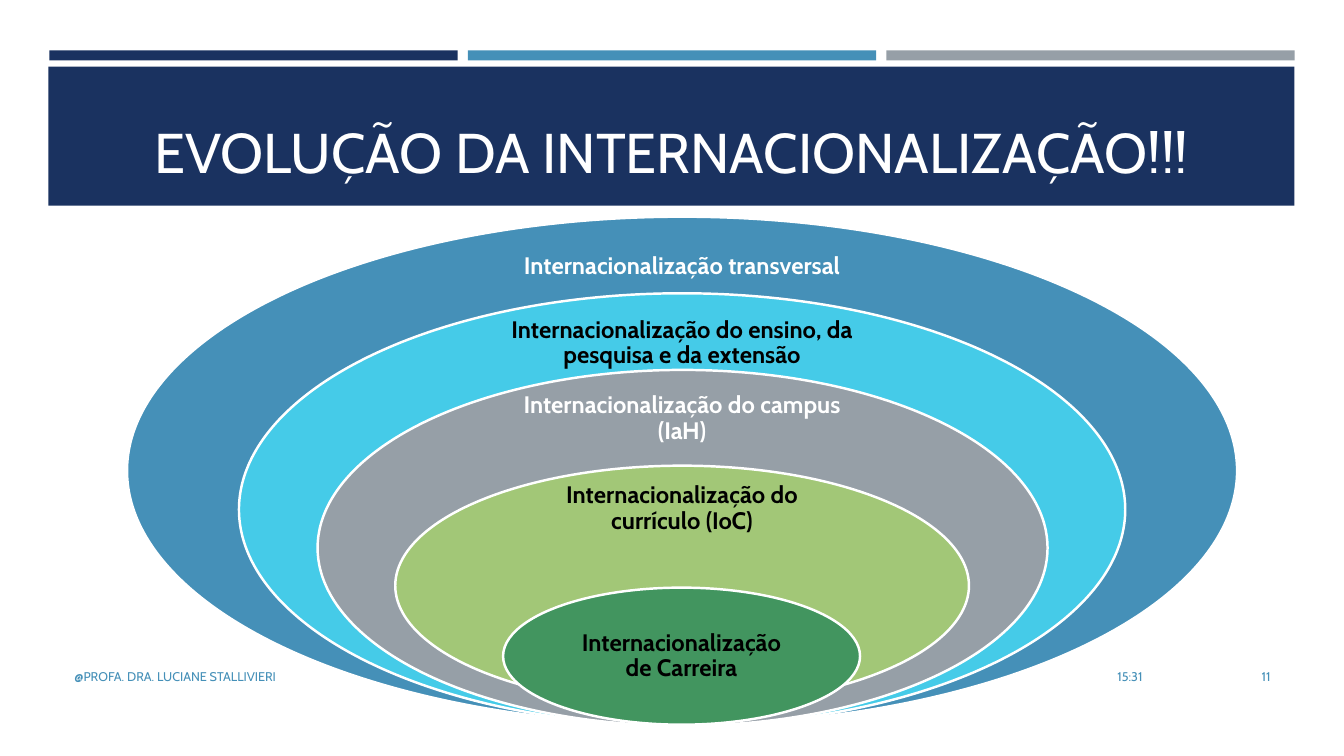
from dataclasses import dataclass

from pptx import Presentation
from pptx.dml.color import RGBColor
from pptx.enum.shapes import MSO_SHAPE as Preset
from pptx.enum.text import MSO_ANCHOR as Anchor, PP_ALIGN as Align
from pptx.shapes.autoshape import Shape
from pptx.slide import Slide
from pptx.util import Emu, Pt

EMU_PER_PX = 9144
FONT = "Cabin"
COLORS = {
    "white": "FFFFFF",
    "black": "000000",
    "navy": "1A3260",
    "blue": "4590B8",
    "cyan": "45CBE8",
    "gray": "969FA7",
    "lime": "A2C777",
    "green": "42955F",
}


@dataclass(frozen=True)
class Box:
    left: int
    top: int
    width: int
    height: int

    def emu(self) -> tuple[Emu, ...]:
        sides = (self.left, self.top, self.width, self.height)
        return tuple(Emu(side * EMU_PER_PX) for side in sides)


@dataclass(frozen=True)
class Label:
    text: str
    box: Box
    size: int
    color: str
    align: Align = Align.CENTER
    anchor: Anchor = Anchor.MIDDLE
    bold: bool = False
    line_spacing: float = 1.0
    inset_x: int = 10
    inset_y: int = 5


@dataclass(frozen=True)
class Ring:
    text: str
    oval: Box
    label_box: Box
    fill: str
    text_color: str


RINGS = [
    Ring("Internacionalização transversal",
         Box(126, 215, 1101, 504), Box(470, 240, 413, 50), "blue", "white"),
    Ring("Internacionalização do ensino, da pesquisa e da extensão",
         Box(237, 291, 879, 429), Box(487, 316, 379, 49), "cyan", "black"),
    Ring("Internacionalização do campus (IaH)",
         Box(315, 367, 724, 353), Box(489, 391, 375, 49), "gray", "white"),
    Ring("Internacionalização do currículo (IoC)",
         Box(392, 462, 569, 238), Box(523, 483, 307, 43), "lime", "black"),
    Ring("Internacionalização de Carreira",
         Box(499, 583, 354, 136), Box(551, 617, 250, 68), "green", "black"),
]

TITLE = Label("EVOLUÇÃO DA INTERNACIONALIZAÇÃO!!!", Box(63, 80, 1206, 108),
              40, "white", anchor=Anchor.BOTTOM)

FOOTERS = [
    Label("@PROFA. DRA. LUCIANE STALLIVIERI", Box(64, 651, 756, 40), 9, "blue", Align.LEFT),
    Label("15:31", Box(832, 651, 311, 40), 9, "blue", Align.RIGHT),
    Label("11", Box(1155, 651, 115, 40), 9, "blue", Align.RIGHT),
]


def rgb(color: str) -> RGBColor:
    return RGBColor.from_string(COLORS[color])


def add_filled(slide: Slide, preset: Preset, box: Box, fill: str) -> Shape:
    shape = slide.shapes.add_shape(preset, *box.emu())
    shape.shadow.inherit = False
    shape.fill.solid()
    shape.fill.fore_color.rgb = rgb(fill)
    shape.line.fill.background()
    return shape


def add_label(slide: Slide, label: Label) -> None:
    frame = slide.shapes.add_textbox(*label.box.emu()).text_frame
    frame.word_wrap = True
    frame.vertical_anchor = label.anchor
    frame.margin_left = frame.margin_right = Emu(label.inset_x * EMU_PER_PX)
    frame.margin_top = frame.margin_bottom = Emu(label.inset_y * EMU_PER_PX)
    paragraph = frame.paragraphs[0]
    paragraph.alignment = label.align
    paragraph.line_spacing = label.line_spacing
    run = paragraph.add_run()
    run.text = label.text
    run.font.name = FONT
    run.font.size = Pt(label.size)
    run.font.bold = label.bold
    run.font.color.rgb = rgb(label.color)


def add_ring(slide: Slide, ring: Ring) -> None:
    oval = add_filled(slide, Preset.OVAL, ring.oval, ring.fill)
    oval.line.color.rgb = rgb("white")
    oval.line.width = Pt(1.75)
    add_label(slide, Label(ring.text, ring.label_box, 17, ring.text_color, bold=True,
                           line_spacing=0.9, inset_x=13, inset_y=13))


def main() -> None:
    presentation = Presentation()
    presentation.slide_width = Emu(1333 * EMU_PER_PX)
    presentation.slide_height = Emu(750 * EMU_PER_PX)
    slide = presentation.slides.add_slide(presentation.slide_layouts[6])

    for column, color in enumerate(("navy", "blue", "gray")):
        add_filled(slide, Preset.RECTANGLE, Box(49 + 415 * column, 50, 405, 10), color)
    add_filled(slide, Preset.RECTANGLE, Box(48, 66, 1236, 138), "navy")
    add_label(slide, TITLE)
    for ring in RINGS:
        add_ring(slide, ring)
    for footer in FOOTERS:
        add_label(slide, footer)

    presentation.save("out.pptx")


if __name__ == "__main__":
    main()
